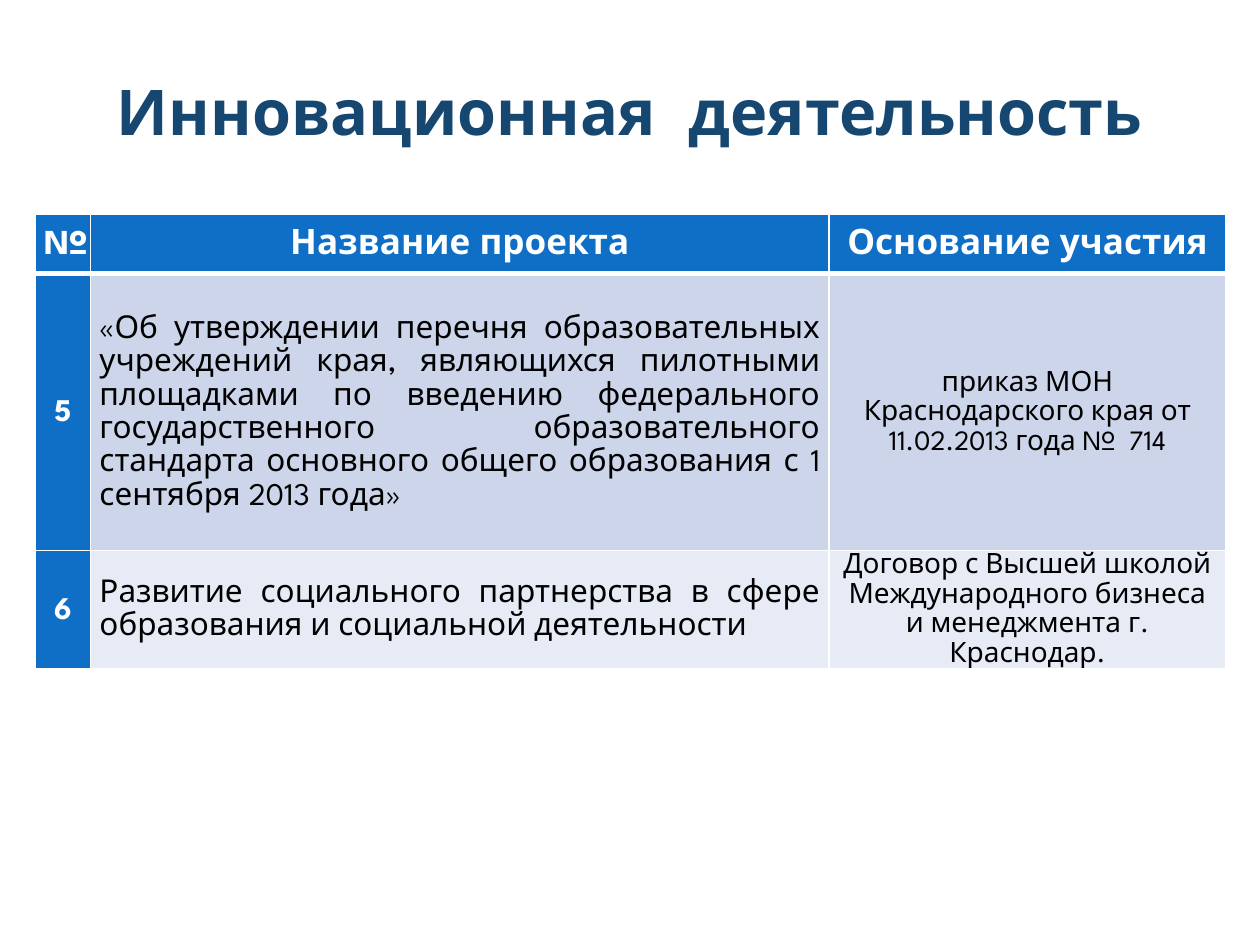
from lxml import etree
from pptx import Presentation
from pptx import util as u
from pptx.dml.color import RGBColor
from pptx.enum import text
from pptx.oxml.ns import qn

COLORS = {
    "title": "164770",
    "accent": "0F6FC6",
    "band_dark": "CCD5EA",
    "band_light": "E7EBF5",
    "white": "FFFFFF",
    "black": "000000",
}
CENTER = text.PP_ALIGN.CENTER
JUSTIFY = text.PP_ALIGN.JUSTIFY


class Deck:
    font = "League Spartan"

    def __init__(self, width, height):
        self.prs = Presentation()
        self.prs.slide_width = u.Inches(width)
        self.prs.slide_height = u.Inches(height)
        self.s = self.prs.slides.add_slide(self.prs.slide_layouts[6])

    def add_text(self, tf, words, size, color, bold=False, align=CENTER, spacing=None):
        tf.word_wrap = True
        p = tf.paragraphs[0]
        p.alignment = align
        if spacing:
            p.line_spacing = spacing
        r = p.add_run()
        r.text = words
        r.font.name = self.font
        r.font.size = u.Pt(size)
        r.font.bold = bold
        r.font.color.rgb = RGBColor.from_string(COLORS[color])

    def title(self, words, left, top, width, height):
        box = self.s.shapes.add_textbox(*map(u.Inches, (left, top, width, height)))
        self.add_text(box.text_frame, words, 36, "title", bold=True)

    def borders(self, cell, bottom):
        tcPr = cell._tc.get_or_add_tcPr()
        for i, (side, width) in enumerate((("L", 1), ("R", 1), ("T", 1), ("B", bottom))):
            ln = etree.Element(qn(f"a:ln{side}"), w=str(u.Pt(width)))
            fill = etree.SubElement(ln, qn("a:solidFill"))
            etree.SubElement(fill, qn("a:srgbClr"), val=COLORS["white"])
            tcPr.insert(i, ln)

    def cell(self, cell, words, fill, size, color, bold, align, bottom):
        cell.fill.solid()
        cell.fill.fore_color.rgb = RGBColor.from_string(COLORS[fill])
        cell.vertical_anchor = text.MSO_ANCHOR.MIDDLE
        cell.margin_left = cell.margin_right = u.Inches(0.07)
        cell.margin_top = cell.margin_bottom = 0
        self.add_text(cell.text_frame, words, size, color, bold, align, 1.15)
        self.borders(cell, bottom)

    def table(self, rows, left, top, widths, heights):
        frame = self.s.shapes.add_table(
            len(rows), len(widths), u.Inches(left), u.Inches(top),
            u.Inches(sum(widths)), u.Inches(sum(heights)))
        table = frame.table
        for column, width in zip(table.columns, widths):
            column.width = u.Inches(width)
        for row, height in zip(table.rows, heights):
            row.height = u.Inches(height)
        for i, row in enumerate(rows):
            band = "band_dark" if i % 2 else "band_light"
            for j, words in enumerate(row):
                header = i == 0
                strong = header or j == 0
                self.cell(
                    table.cell(i, j), words,
                    fill="accent" if strong else band,
                    size=20 if header else (18, 18, 16)[j],
                    color="white" if strong else "black",
                    bold=strong,
                    align=JUSTIFY if j == 1 and not header else CENTER,
                    bottom=3 if header else 1)


def main():
    deck = Deck(10, 7.5)

    # Projects table
    rows = [
        ("№", "Название проекта", "Основание участия"),
        ("5",
         "«Об утверждении перечня образовательных учреждений края, являющихся "
         "пилотными площадками по введению федерального государственного "
         "образовательного стандарта основного общего образования с 1 сентября 2013 года»",
         "приказ МОН Краснодарского края от 11.02.2013 года №  714"),
        ("6",
         "Развитие социального партнерства в сфере образования и социальной деятельности",
         "Договор с Высшей школой Международного бизнеса и менеджмента г. Краснодар."),
    ]
    deck.table(rows, 0.28, 1.7, widths=(0.44, 5.86, 3.15), heights=(0.47, 2.2, 0.47))

    # Title
    deck.title("Инновационная  деятельность", 0.5, 0.53, 9, 1.25)

    deck.prs.save("out.pptx")


if __name__ == "__main__":
    main()
